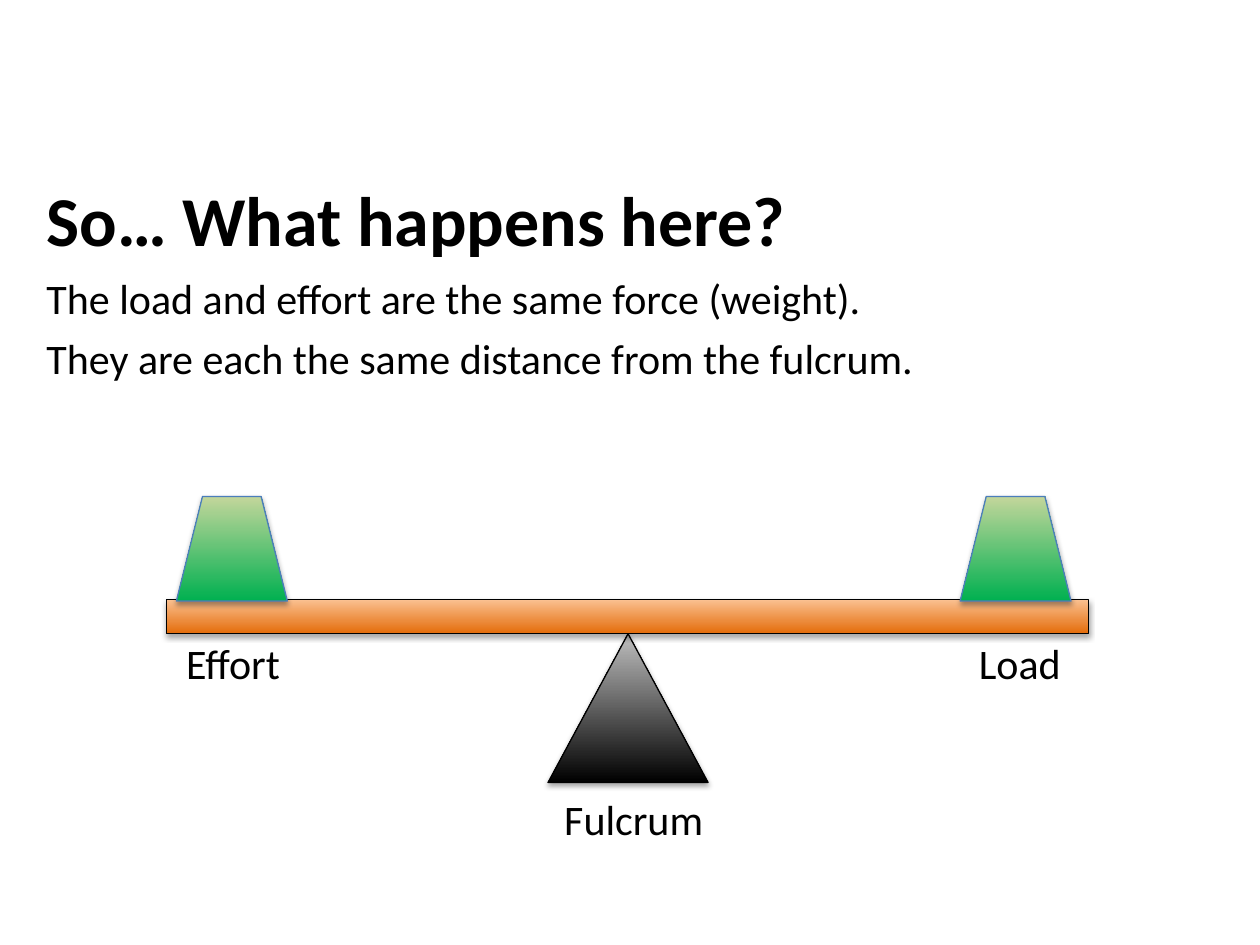
from lxml import etree
from pptx import Presentation
from pptx.dml.color import RGBColor
from pptx.enum.shapes import MSO_SHAPE
from pptx.enum.text import MSO_AUTO_SIZE
from pptx.oxml.ns import qn
from pptx.util import Inches, Pt

TRIANGLE = MSO_SHAPE.ISOSCELES_TRIANGLE
RECTANGLE = MSO_SHAPE.RECTANGLE
TRAPEZOID = MSO_SHAPE.TRAPEZOID
FIT_SHAPE = MSO_AUTO_SIZE.SHAPE_TO_FIT_TEXT


def color(value):
    return RGBColor.from_string(value)


deck = Presentation()
deck.slide_width = Inches(10)
deck.slide_height = Inches(7.5)
page = deck.slides.add_slide(deck.slide_layouts[6])

parts = [
    (TRIANGLE, 4.35, 5.03, 1.27, 1.18, "000000", "BFBFBF", "000000"),
    (RECTANGLE, 1.32, 4.76, 7.32, 0.27, "E46C0A", "FAC090", "000000"),
    (TRAPEZOID, 7.62, 3.94, 0.88, 0.83, "00B050", "C3D69B", "4B7EBC"),
    (TRAPEZOID, 1.4, 3.94, 0.88, 0.83, "00B050", "C3D69B", "4B7EBC"),
]
for preset, left, top, width, height, bottom_color, top_color, line_color in parts:
    part = page.shapes.add_shape(
        preset, Inches(left), Inches(top), Inches(width), Inches(height))
    part.fill.gradient()
    part.fill.gradient_angle = 90
    for stop, value in zip(part.fill.gradient_stops, (bottom_color, top_color)):
        stop.color.rgb = color(value)
    part.line.color.rgb = color(line_color)
    part.line.width = Pt(0.75)
    part.shadow.inherit = False
    effects = part._element.spPr.find(qn("a:effectLst"))
    shadow = etree.SubElement(
        effects, qn("a:outerShdw"), blurRad=str(Pt(3.1)), dist=str(Pt(1.8)),
        dir="5400000", rotWithShape="0")
    shadow_color = etree.SubElement(shadow, qn("a:srgbClr"), val="000000")
    etree.SubElement(shadow_color, qn("a:alpha"), val="35000")

texts = [
    (0.27, 1.35, 7.09, 0.77, 40, True, 0, ["So… What happens here?"]),
    (0.27, 2.11, 8.34, 0.99, 24, False, 6, [
        "The load and effort are the same force (weight).",
        "They are each the same distance from the fulcrum."]),
    (1.38, 5.01, 1.64, 0.5, 24, False, 6, ["Effort"]),
    (7.67, 5.01, 1.64, 0.5, 24, False, 6, ["Load"]),
    (4.38, 6.25, 1.64, 0.5, 24, False, 6, ["Fulcrum"]),
]
for left, top, width, height, size, bold, space_after, lines in texts:
    box = page.shapes.add_textbox(
        Inches(left), Inches(top), Inches(width), Inches(height))
    frame = box.text_frame
    frame.word_wrap = True
    frame.auto_size = FIT_SHAPE
    frame.text = "\n".join(lines)
    for para in frame.paragraphs:
        para.space_after = Pt(space_after)
        para.font.name = "Calibri"
        para.font.size = Pt(size)
        para.font.bold = bold
        para.font.color.rgb = color("000000")

deck.save("out.pptx")
